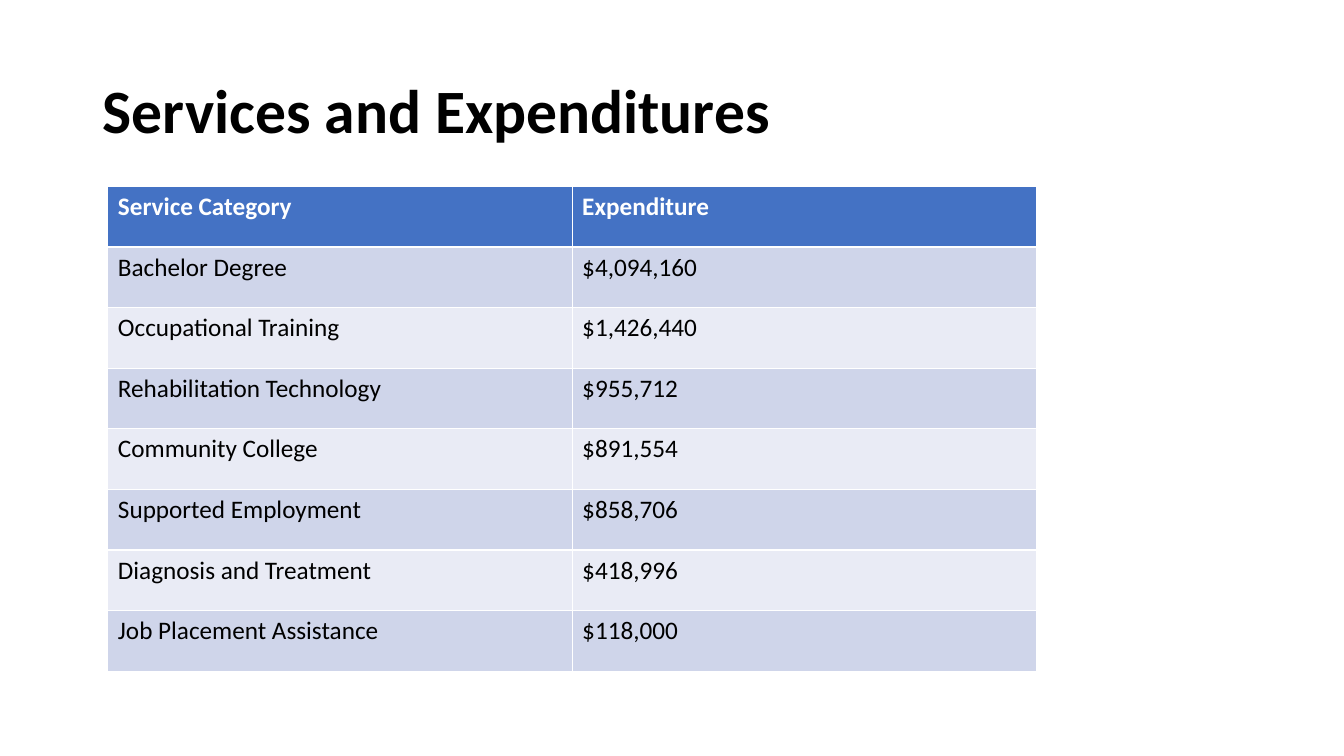
import pptx
import pptx.dml.color
import pptx.enum.text
import pptx.util

Inches = pptx.util.Inches
RGBColor = pptx.dml.color.RGBColor

BLACK = RGBColor(0x00, 0x00, 0x00)
WHITE = RGBColor(0xFF, 0xFF, 0xFF)
HEADER_BLUE = RGBColor(0x44, 0x72, 0xC4)
BAND_COLORS = (RGBColor(0xCF, 0xD5, 0xEA), RGBColor(0xE9, 0xEB, 0xF5))

HEADER = ("Service Category", "Expenditure")
EXPENDITURES = (
    ("Bachelor Degree", "$4,094,160"),
    ("Occupational Training", "$1,426,440"),
    ("Rehabilitation Technology", "$955,712"),
    ("Community College", "$891,554"),
    ("Supported Employment", "$858,706"),
    ("Diagnosis and Treatment", "$418,996"),
    ("Job Placement Assistance", "$118,000"),
)


def set_attributes(target, values):
    for name, value in values.items():
        setattr(target, name, value)


def write_text(text_frame, text, size, color, bold):
    paragraph = text_frame.paragraphs[0]
    run = paragraph.add_run()
    run.text = text
    set_attributes(run.font, {"name": "Calibri", "size": pptx.util.Pt(size), "bold": bold})
    run.font.color.rgb = color
    return paragraph


def format_title(title, text):
    set_attributes(title, {
        "left": Inches(0.92), "top": Inches(0.4),
        "width": Inches(11.5), "height": Inches(1.45),
    })
    set_attributes(title.text_frame, {
        "word_wrap": True,
        "auto_size": pptx.enum.text.MSO_AUTO_SIZE.NONE,
        "vertical_anchor": pptx.enum.text.MSO_ANCHOR.MIDDLE,
    })
    paragraph = write_text(title.text_frame, text, 44, BLACK, True)
    set_attributes(paragraph, {
        "alignment": pptx.enum.text.PP_ALIGN.LEFT, "line_spacing": 0.9,
    })


def fill_row(row, texts, fill_color, text_color, bold):
    for cell, text in zip(row.cells, texts):
        cell.fill.solid()
        cell.fill.fore_color.rgb = fill_color
        write_text(cell.text_frame, text, 18, text_color, bold)


def add_expenditure_table(slide):
    """Add the table; its default style draws the white cell borders."""
    table = slide.shapes.add_table(
        len(EXPENDITURES) + 1, len(HEADER),
        Inches(1.07), Inches(1.85), Inches(9.21), Inches(4.81),
    ).table
    header_row, *body_rows = table.rows
    fill_row(header_row, HEADER, HEADER_BLUE, WHITE, True)
    for index, (row, texts) in enumerate(zip(body_rows, EXPENDITURES)):
        fill_row(row, texts, BAND_COLORS[index % 2], BLACK, False)


def main():
    presentation = pptx.Presentation()
    set_attributes(presentation, {
        "slide_width": Inches(13.33), "slide_height": Inches(7.5),
    })
    slide = presentation.slides.add_slide(presentation.slide_layouts[5])
    format_title(slide.shapes.title, "Services and Expenditures")
    add_expenditure_table(slide)
    presentation.save("out.pptx")


if __name__ == "__main__":
    main()
